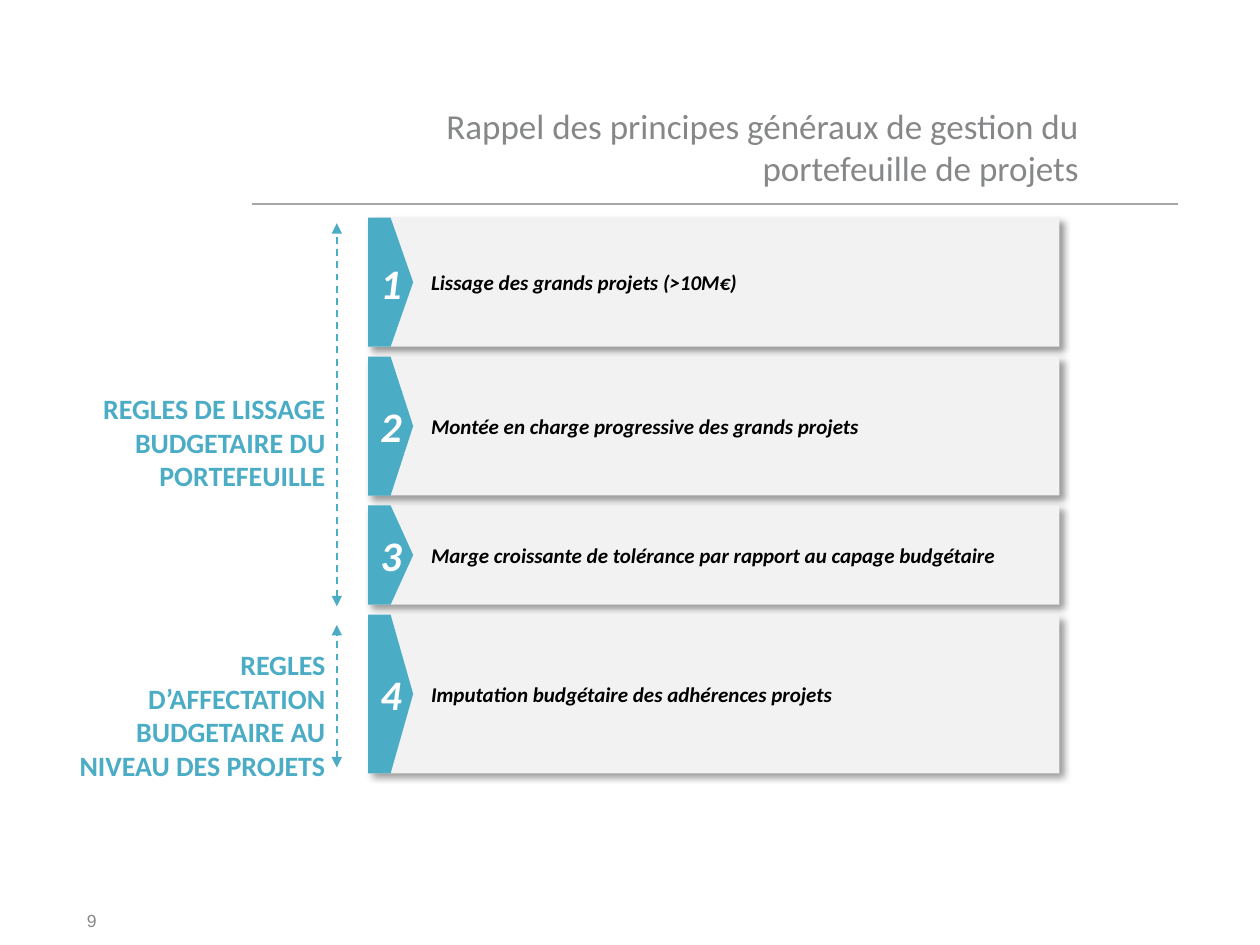
"""Build the slide on the general rules of project portfolio management."""
from dataclasses import dataclass

from lxml import etree
from pptx import Presentation, util as u
from pptx.dml.color import RGBColor
from pptx.enum import dml, shapes, text
from pptx.oxml.ns import qn

TEAL = RGBColor(0x4B, 0xAC, 0xC6)
PALE = RGBColor(0xF2, 0xF2, 0xF2)
GREY = RGBColor(0x86, 0x87, 0x88)
RULE = RGBColor(0xA6, 0xA6, 0xA6)
BLACK = RGBColor(0, 0, 0)
WHITE = RGBColor(0xFF, 0xFF, 0xFF)

LEFT, WIDTH, TOP, GAP = 7.42, 13.94, 4.39, 0.2
TIP = 0.91
ALIGN = text.PP_ALIGN


@dataclass
class Font:
    size: float
    color: RGBColor
    bold: bool = False
    slant: bool = False
    name: str = "Calibri"


@dataclass
class Band:
    label: str
    height: float


@dataclass
class Group:
    label: str
    top: float
    height: float
    start: float
    end: float


HEAD = Font(20, GREY)
ITEM = Font(12, BLACK, True, True)
DIGIT = Font(24, WHITE, True, True)
SIDE = Font(16, TEAL, True)
PAGE = Font(10, GREY, name="Arial")

BANDS = [
    Band("Lissage des grands projets (>10M€)", 2.6),
    Band("Montée en charge progressive des grands projets", 2.8),
    Band("Marge croissante de tolérance par rapport au capage budgétaire", 2),
    Band("Imputation budgétaire des adhérences projets", 3.2),
]
GROUPS = [
    Group("REGLES DE LISSAGE BUDGETAIRE DU PORTEFEUILLE", 7.77, 2.31, 12.22, 4.5),
    Group("REGLES D’AFFECTATION BUDGETAIRE AU NIVEAU DES PROJETS", 12.93, 3, 15.47, 12.6),
]


def write(frame, words: str, font: Font, align: ALIGN):
    frame.word_wrap = True
    para = frame.paragraphs[0]
    para.alignment = align
    run = para.add_run()
    run.text = words
    face = run.font
    face.name, face.size = font.name, u.Pt(font.size)
    face.bold, face.italic = font.bold, font.slant
    face.color.rgb = font.color
    return para


def strip(frame) -> None:
    frame.margin_left = frame.margin_right = 0
    frame.margin_top = frame.margin_bottom = 0


def block(slide, kind, top: float, width: float, height: float, fill: RGBColor):
    shape = slide.shapes.add_shape(kind, u.Cm(LEFT), u.Cm(top), u.Cm(width), u.Cm(height))
    shape.shadow.inherit = False
    shape.fill.solid()
    shape.fill.fore_color.rgb = fill
    shape.line.fill.background()
    shape.text_frame.vertical_anchor = text.MSO_ANCHOR.MIDDLE
    return shape


def shade(shape) -> None:
    effects = shape.element.spPr.find(qn("a:effectLst"))
    outer = etree.SubElement(effects, qn("a:outerShdw"), blurRad=str(u.Pt(4)),
                             dist=str(u.Pt(3)), dir="2700000", algn="tl", rotWithShape="0")
    tint = etree.SubElement(outer, qn("a:srgbClr"), val=str(BLACK))
    etree.SubElement(tint, qn("a:alpha"), val="40000")


def stroke(slide, start: tuple[float, float], end: tuple[float, float],
           color: RGBColor, width: float, arrow: bool = False) -> None:
    ends = [u.Cm(n) for n in start + end]
    link = slide.shapes.add_connector(shapes.MSO_CONNECTOR.STRAIGHT, *ends)
    link.line.color.rgb = color
    link.line.width = u.Pt(width)
    if arrow:
        link.line.dash_style = dml.MSO_LINE.DASH
        line = link.element.spPr.find(qn("a:ln"))
        for tag in ("a:headEnd", "a:tailEnd"):
            etree.SubElement(line, qn(tag), type="triangle")
    etree.SubElement(link.element.spPr, qn("a:effectLst"))


def draw_band(slide, band: Band, rank: int, top: float) -> None:
    panel = block(slide, shapes.MSO_SHAPE.RECTANGLE, top, WIDTH, band.height, PALE)
    shade(panel)
    panel.text_frame.margin_left = u.Cm(1.27)
    para = write(panel.text_frame, band.label, ITEM, ALIGN.LEFT)
    para.space_after = u.Pt(6)
    badge = block(slide, shapes.MSO_SHAPE.PENTAGON, top, TIP, band.height, TEAL)
    write(badge.text_frame, str(rank), DIGIT, ALIGN.CENTER)


def draw_group(slide, group: Group) -> None:
    box = slide.shapes.add_textbox(u.Cm(0.94), u.Cm(group.top), u.Cm(5.87), u.Cm(group.height))
    write(box.text_frame, group.label, SIDE, ALIGN.RIGHT)
    box.text_frame.auto_size = text.MSO_AUTO_SIZE.SHAPE_TO_FIT_TEXT
    stroke(slide, (6.79, group.start), (6.79, group.end), TEAL, 1, True)


def draw_title(slide, words: str) -> None:
    title = slide.shapes.title
    title.left, title.top = u.Cm(LEFT), u.Cm(1.07)
    title.width, title.height = u.Cm(14.33), u.Cm(2.74)
    frame = title.text_frame
    strip(frame)
    frame.auto_size = text.MSO_AUTO_SIZE.NONE
    frame.vertical_anchor = text.MSO_ANCHOR.BOTTOM
    write(frame, words, HEAD, ALIGN.RIGHT)


def main() -> None:
    deck = Presentation()
    deck.slide_width, deck.slide_height = u.Cm(25.4), u.Cm(19.05)
    slide = deck.slides.add_slide(deck.slide_layouts[5])
    draw_title(slide, "Rappel des principes généraux de gestion du portefeuille de projets")
    page = slide.shapes.add_textbox(u.Cm(1.75), u.Cm(18.34), u.Cm(1.37), u.Cm(1.07))
    strip(page.text_frame)
    write(page.text_frame, "9", PAGE, ALIGN.LEFT)
    stroke(slide, (5.08, 4.11), (23.75, 4.11), RULE, 0.75)
    top = TOP
    for rank, band in enumerate(BANDS, 1):
        draw_band(slide, band, rank, top)
        top += band.height + GAP
    for group in GROUPS:
        draw_group(slide, group)
    deck.save("out.pptx")


if __name__ == "__main__":
    main()
